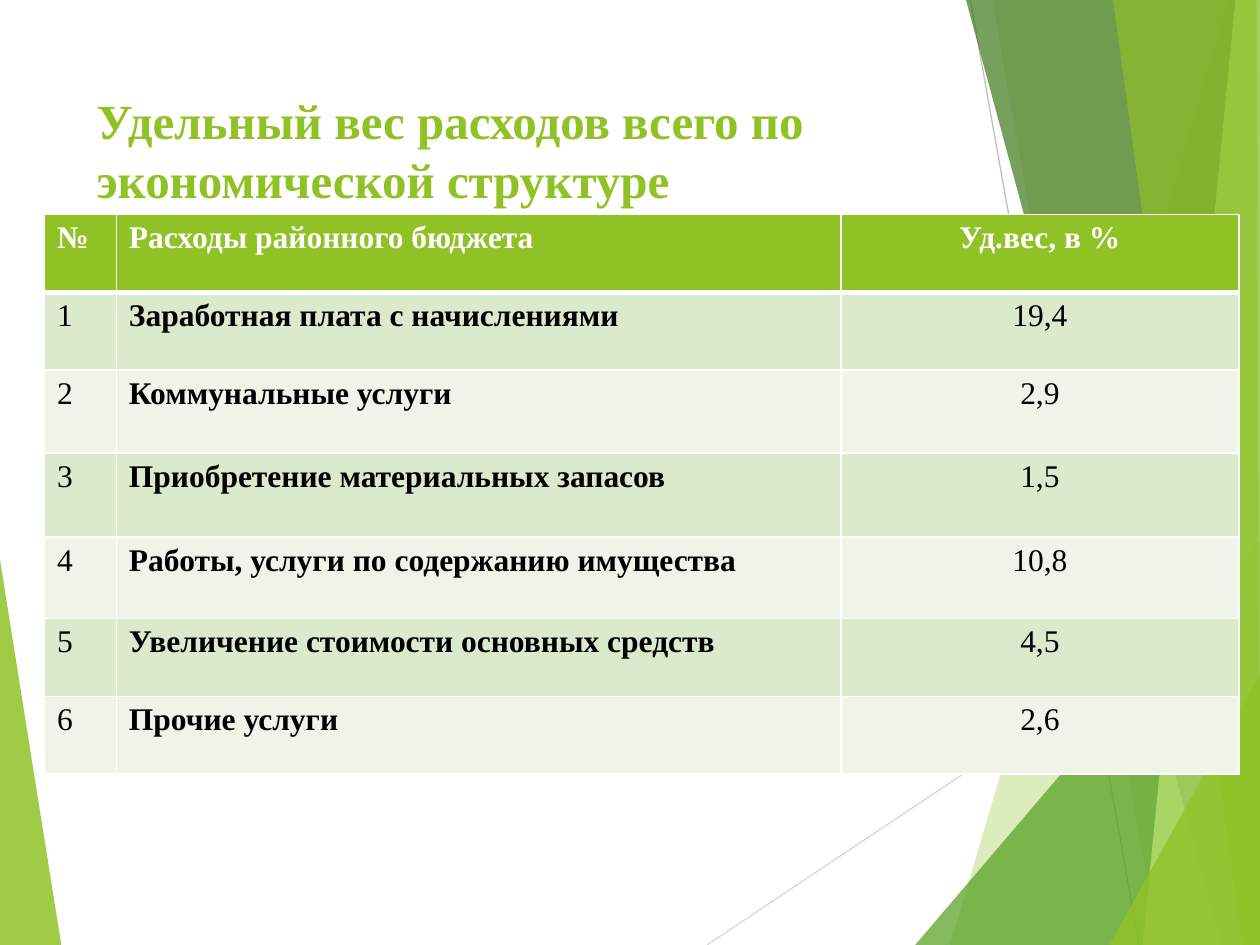
from dataclasses import dataclass

from lxml import etree
from pptx import Presentation
from pptx.dml.color import RGBColor
from pptx.enum.text import MSO_ANCHOR, PP_ALIGN
from pptx.oxml.ns import qn
from pptx.util import Pt

TOP = MSO_ANCHOR.TOP
LEFT = PP_ALIGN.LEFT
CENTER = PP_ALIGN.CENTER
TITLE_ONLY = 5


@dataclass(frozen=True)
class Theme:
    font: str = "Times New Roman"
    title_size: int = 28
    table_size: int = 18
    accent: str = "90C226"
    green: str = "54A021"
    forest: str = "3F7819"
    lime: str = "C0E474"
    white: str = "FFFFFF"
    black: str = "000000"
    band_dark: str = "DBE9CD"
    band_light: str = "EEF4E8"
    line_dark: str = "BFBFBF"
    line_light: str = "D9D9D9"


THEME = Theme()

RAYS = [
    ((404, 540), (720, 329), THEME.line_light),
    ((554.5, 0), (651, 540), THEME.line_dark),
]
FACETS = [
    ([(0, 320), (35, 540), (0, 540)], THEME.accent, 85),
    ([(702, 0), (543, 540), (720, 540), (720, 0)], THEME.accent, 30),
    ([(567, 0), (662, 540), (720, 540), (720, 0)], THEME.accent, 20),
    ([(523, 540), (720, 309), (720, 540)], THEME.green, 72),
    ([(552, 0), (698, 540), (720, 540), (720, 0)], THEME.forest, 70),
    ([(706.5, 0), (653, 540), (720, 540), (720, 0)], THEME.lime, 70),
    ([(636, 0), (710, 540), (720, 540), (718.5, 0)], THEME.accent, 65),
    ([(634.5, 540), (720, 385), (720, 540)], THEME.accent, 80),
]

TITLE = "Удельный вес расходов всего по экономической структуре"
HEADER = ("№", "Расходы районного бюджета", "Уд.вес, в %")
EXPENSES = [
    ("Заработная плата с начислениями", "19,4"),
    ("Коммунальные услуги", "2,9"),
    ("Приобретение материальных запасов", "1,5"),
    ("Работы, услуги по содержанию имущества", "10,8"),
    ("Увеличение стоимости основных средств", "4,5"),
    ("Прочие услуги", "2,6"),
]
COLUMN_WIDTHS = (41, 414, 227.5)
ROW_HEIGHTS = (44.5, 44.5, 47.5, 48, 46.5, 44.5, 44.5)


def apply_format(target, values):
    for name, value in values.items():
        setattr(target, name, value)


def write_text(frame, text, size, color, bold, align=LEFT):
    para = frame.paragraphs[0]
    para.alignment = align
    span = para.add_run()
    span.text = text
    apply_format(span.font, {"name": THEME.font, "size": Pt(size), "bold": bold})
    span.font.color.rgb = RGBColor.from_string(color)


def add_ray(page, start, end, color):
    ray = page.shapes.add_connector(1, *map(Pt, start + end))
    ray.line.width = Pt(0.75)
    ray.line.color.rgb = RGBColor.from_string(color)
    etree.SubElement(ray._element.spPr, qn("a:effectLst"))


def add_facet(page, points, color, opacity):
    builder = page.shapes.build_freeform(*points[0], scale=Pt(1))
    builder.add_line_segments(points[1:], close=True)
    facet = builder.convert_to_shape()
    facet.shadow.inherit = False
    facet.line.fill.background()
    facet.fill.solid()
    facet.fill.fore_color.rgb = RGBColor.from_string(color)
    tint = facet._element.spPr.find(".//" + qn("a:srgbClr"))
    etree.SubElement(tint, qn("a:alpha"), val=str(opacity * 1000))


def add_title(page):
    box = page.shapes.title
    apply_format(box, {"left": Pt(48), "top": Pt(48), "width": Pt(500), "height": Pt(104)})
    apply_format(box.text_frame, {"word_wrap": True, "vertical_anchor": TOP})
    write_text(box.text_frame, TITLE, THEME.title_size, THEME.accent, True)


def add_borders(cell, widths):
    properties = cell._tc.get_or_add_tcPr()
    for position, (side, width) in enumerate(widths.items()):
        border = etree.Element(qn("a:ln" + side), w=str(Pt(width)))
        fill = etree.SubElement(border, qn("a:solidFill"))
        etree.SubElement(fill, qn("a:srgbClr"), val=THEME.white)
        properties.insert(position, border)


def fill_cell(cell, text, row, column):
    header = row == 0
    band = THEME.band_dark if row % 2 else THEME.band_light
    cell.fill.solid()
    cell.fill.fore_color.rgb = RGBColor.from_string(THEME.accent if header else band)
    write_text(
        cell.text_frame,
        text,
        THEME.table_size,
        THEME.white if header else THEME.black,
        header or column == 1,
        CENTER if column == 2 else LEFT,
    )
    add_borders(cell, {"L": 1, "R": 1, "T": 3 if row == 1 else 1, "B": 3 if header else 1})


def add_expense_table(page):
    rows = [HEADER] + [(str(number), *item) for number, item in enumerate(EXPENSES, 1)]
    frame = page.shapes.add_table(
        len(rows), len(HEADER), Pt(25.5), Pt(122.5),
        Pt(sum(COLUMN_WIDTHS)), Pt(sum(ROW_HEIGHTS)),
    )
    table = frame.table
    for column, width in zip(table.columns, COLUMN_WIDTHS):
        column.width = Pt(width)
    for row, height in zip(table.rows, ROW_HEIGHTS):
        row.height = Pt(height)
    for row, texts in enumerate(rows):
        for column, text in enumerate(texts):
            fill_cell(table.cell(row, column), text, row, column)


def main():
    deck = Presentation()
    apply_format(deck, {"slide_width": Pt(720), "slide_height": Pt(540)})
    page = deck.slides.add_slide(deck.slide_layouts[TITLE_ONLY])
    for ray in RAYS:
        add_ray(page, *ray)
    for facet in FACETS:
        add_facet(page, *facet)
    add_title(page)
    add_expense_table(page)
    deck.save("out.pptx")


if __name__ == "__main__":
    main()
